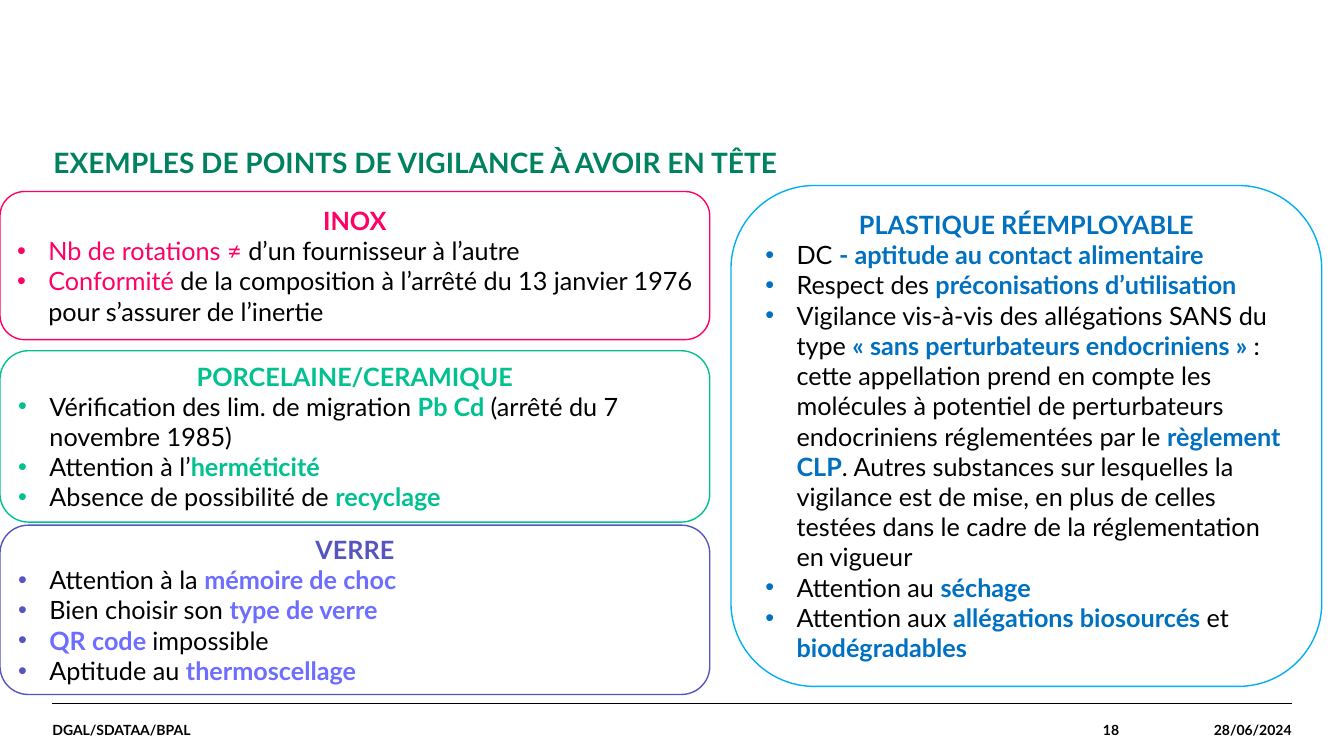
from lxml import etree
from pptx import Presentation
from pptx.dml.color import RGBColor
from pptx.enum.shapes import MSO_CONNECTOR, MSO_SHAPE
from pptx.enum.text import MSO_ANCHOR, PP_ALIGN
from pptx.oxml.ns import qn
from pptx.util import Inches, Pt

STRAIGHT = MSO_CONNECTOR.STRAIGHT
ROUNDED = MSO_SHAPE.ROUNDED_RECTANGLE
TOP, MIDDLE = MSO_ANCHOR.TOP, MSO_ANCHOR.MIDDLE
LEFT, CENTER, RIGHT = PP_ALIGN.LEFT, PP_ALIGN.CENTER, PP_ALIGN.RIGHT

BLACK = RGBColor(0x00, 0x00, 0x00)
WHITE = RGBColor(0xFF, 0xFF, 0xFF)
DARK_GREEN = RGBColor(0x00, 0x82, 0x60)
PINK = RGBColor(0xFF, 0x00, 0x66)
MINT = RGBColor(0x00, 0xC1, 0x8F)
MINT_EDGE = RGBColor(0x00, 0xC2, 0x8F)
INDIGO = RGBColor(0x55, 0x55, 0xC1)
VIOLET = RGBColor(0x6D, 0x6D, 0xFF)
BLUE = RGBColor(0x00, 0x70, 0xC0)
SKY = RGBColor(0x00, 0xB0, 0xF0)

FONT = "Lato"
CARD_SIZE = 18
FOOTER_TOP = 6.98
FOOTER_HEIGHT = 0.52
BULLET_INDENT = Inches(0.31)

INOX = [
    "*Nb de rotations ≠ *d’un fournisseur à l’autre",
    "*Conformité* de la composition à l’arrêté du 13 janvier 1976 pour s’assurer de l’inertie",
]
PORCELAINE = [
    "Vérification des lim. de migration *Pb Cd *(arrêté du 7 novembre 1985)",
    "Attention à l’*herméticité*",
    "Absence de possibilité de *recyclage*",
]
VERRE = [
    "Attention à la *mémoire de choc*",
    "Bien choisir son *type de verre*",
    "*QR code *impossible",
    "Aptitude au *thermoscellage*",
]
PLASTIQUE = [
    "DC *- aptitude au contact alimentaire*",
    "Respect des *préconisations d’utilisation*",
    "Vigilance vis-à-vis des allégations SANS du type *« sans perturbateurs endocriniens » *"
    ": cette appellation prend en compte les molécules à potentiel de perturbateurs "
    "endocriniens réglementées par le *règlement CLP*. Autres substances sur lesquelles "
    "la vigilance est de mise, en plus de celles testées dans le cadre de la "
    "réglementation en vigueur",
    "Attention au *séchage*",
    "Attention aux *allégations biosourcés *et *biodégradables*",
]


class SlideBuilder:
    def __init__(self, slide):
        self.shapes = slide.shapes

    def add_words(self, paragraph, text, size, color, bold):
        run = paragraph.add_run()
        run.text = text
        font_format = {"name": FONT, "size": Pt(size), "bold": bold}
        for name, value in font_format.items():
            setattr(run.font, name, value)
        run.font.color.rgb = color

    def label(self, text, box, size, color, align=LEFT, anchor=MIDDLE):
        frame = self.shapes.add_textbox(*map(Inches, box)).text_frame
        frame_format = {
            "word_wrap": True, "vertical_anchor": anchor,
            "margin_left": 0, "margin_top": 0, "margin_right": 0, "margin_bottom": 0,
        }
        for name, value in frame_format.items():
            setattr(frame, name, value)
        paragraph = frame.paragraphs[0]
        paragraph.alignment = align
        self.add_words(paragraph, text, size, color, True)

    def rule(self, left, right, y):
        line = self.shapes.add_connector(
            STRAIGHT, Inches(left), Inches(y), Inches(right), Inches(y))
        line.line.color.rgb = BLACK
        line.line.width = Pt(0.8)
        etree.SubElement(line.element.spPr, qn("a:effectLst"))

    def bullet(self, paragraph, text, color, accent, bold):
        paragraph.alignment = LEFT
        properties = paragraph._p.get_or_add_pPr()
        properties.set("marL", str(BULLET_INDENT))
        properties.set("indent", str(-BULLET_INDENT))
        bullet_color = etree.SubElement(properties, qn("a:buClr"))
        etree.SubElement(bullet_color, qn("a:srgbClr"), val=str(color))
        etree.SubElement(properties, qn("a:buFont"), typeface="Arial")
        etree.SubElement(properties, qn("a:buChar"), char="•")
        for index, part in enumerate(text.split("*")):
            stressed = index % 2 == 1
            if part:
                self.add_words(paragraph, part, CARD_SIZE,
                               accent if stressed else BLACK, stressed and bold)

    def card(self, heading, points, box, edge, color, accent, bold=True):
        card = self.shapes.add_shape(ROUNDED, *map(Inches, box))
        card.shadow.inherit = False
        card.fill.solid()
        card.fill.fore_color.rgb = WHITE
        card.line.color.rgb = edge
        card.line.width = Pt(1)
        frame = card.text_frame
        frame.word_wrap = True
        frame.vertical_anchor = MIDDLE
        frame.paragraphs[0].alignment = CENTER
        self.add_words(frame.paragraphs[0], heading, CARD_SIZE, color, True)
        for point in points:
            self.bullet(frame.add_paragraph(), point, color, accent, bold)


def main():
    deck = Presentation()
    deck.slide_width = Inches(13.33)
    deck.slide_height = Inches(7.5)
    builder = SlideBuilder(deck.slides.add_slide(deck.slide_layouts[6]))

    builder.rule(0.52, 12.81, FOOTER_TOP)
    for text, left, width, align in (
        ("DGAL/SDATAA/BPAL", 0.52, 8.61, LEFT),
        ("18", 9.13, 1.97, RIGHT),
        ("28/06/2024", 11.1, 1.71, RIGHT),
    ):
        builder.label(text, (left, FOOTER_TOP, width, FOOTER_HEIGHT), 10, BLACK, align)

    builder.label("EXEMPLES DE POINTS DE VIGILANCE À AVOIR EN TÊTE",
                  (0.53, 1.44, 11.42, 0.49), 20, DARK_GREEN, anchor=TOP)

    builder.card("INOX", INOX, (0, 1.9, 7.04, 1.47), PINK, PINK, PINK, bold=False)
    builder.card("VERRE", VERRE, (0, 5.21, 7.04, 1.68), INDIGO, INDIGO, VIOLET)
    builder.card("PORCELAINE/CERAMIQUE", PORCELAINE, (0, 3.48, 7.04, 1.7),
                 MINT_EDGE, MINT, MINT)
    builder.card("PLASTIQUE RÉEMPLOYABLE", PLASTIQUE, (7.25, 1.84, 5.86, 4.97),
                 SKY, BLUE, BLUE)

    deck.save("out.pptx")


if __name__ == "__main__":
    main()
